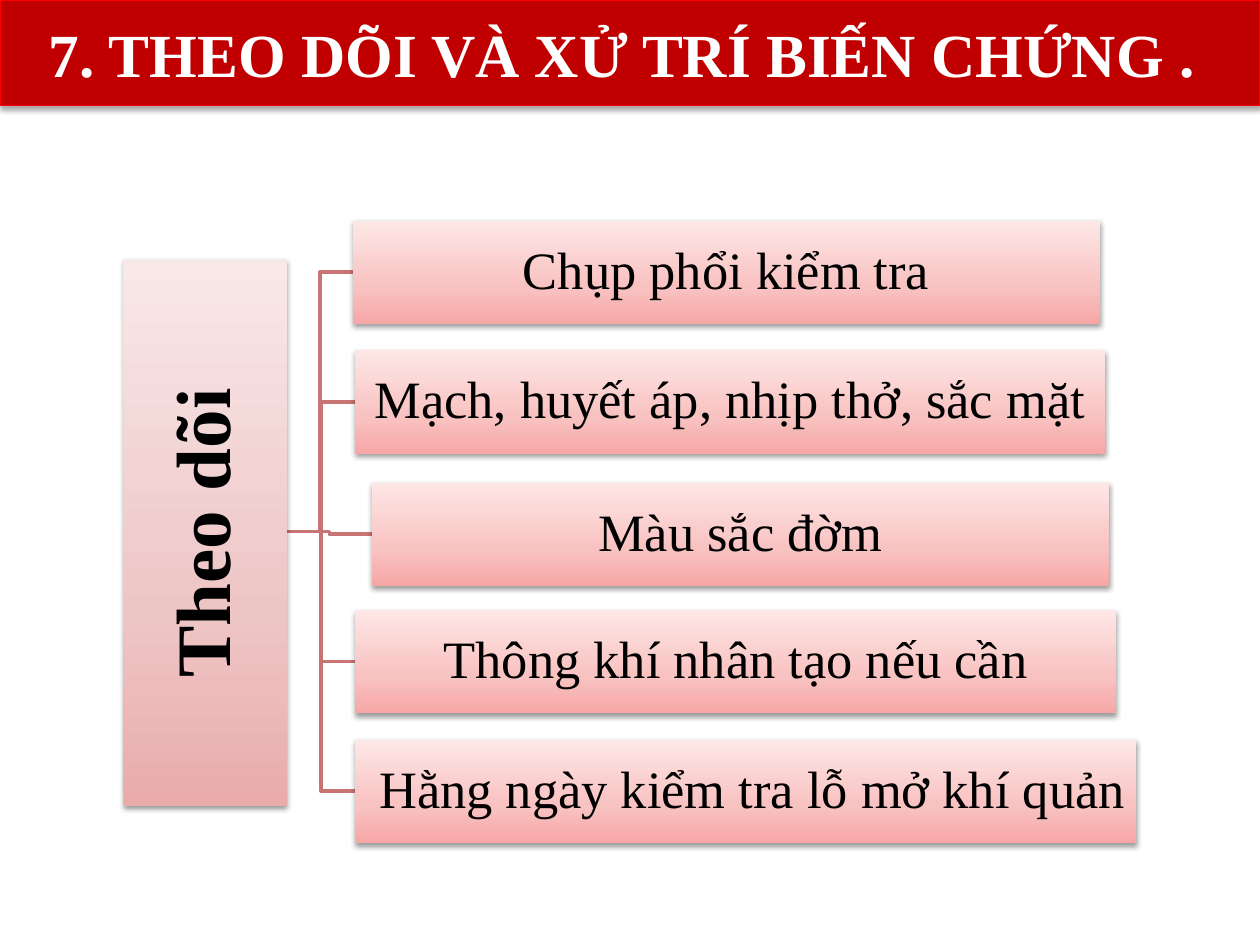
from pptx import Presentation
from pptx.dml.color import RGBColor
from pptx.enum import shapes, text
from pptx.oxml import ns, parse_xml
from pptx.util import Inches, Pt

FONT = "Times New Roman"
HUB_GRADIENT = [(0, "E9ACAB"), (35, "EEC5C5"), (100, "F9E8E8")]
ITEM_GRADIENT = [(0, "F6A7A6"), (35, "F8C2C1"), (100, "FDE7E6")]
LINK_COLOUR = "C77472"
HUB_RIGHT, HUB_MIDDLE = 2.28, 4.22
ITEM_HEIGHT = 0.82
ITEMS = [  # left, top, width, wording
    (2.80, 1.75, 5.93, "Chụp phổi kiểm tra"),
    (2.82, 2.78, 5.95, "Mạch, huyết áp, nhịp thở, sắc mặt"),
    (2.95, 3.83, 5.85, "Màu sắc đờm"),
    (2.82, 4.84, 6.04, "Thông khí nhân tạo nếu cần"),
    (2.82, 5.87, 6.20, " Hằng ngày kiểm tra lỗ mở khí quản"),
]


def colour(value):
    return RGBColor.from_string(value)


def add_shadow(shape, opacity, distance):
    """Give the shape a soft shadow that falls straight down."""
    shape.shadow.inherit = False
    effects = shape._element.spPr.find(ns.qn("a:effectLst"))
    effects.append(parse_xml(
        f'<a:outerShdw {ns.nsdecls("a")} blurRad="{Pt(3.1)}" dist="{Pt(distance)}" '
        f'dir="5400000" rotWithShape="0"><a:srgbClr val="000000">'
        f'<a:alpha val="{opacity * 1000}"/></a:srgbClr></a:outerShdw>'))


def fill_gradient(shape, stops):
    """Run the stops from the bottom up, whatever the shape's rotation."""
    shape.fill.gradient()
    default = shape._element.spPr.find(ns.qn("a:gradFill"))
    marks = "".join(f'<a:gs pos="{place * 1000}"><a:srgbClr val="{value}"/></a:gs>'
                    for place, value in stops)
    default.getparent().replace(default, parse_xml(
        f'<a:gradFill {ns.nsdecls("a")} rotWithShape="0"><a:gsLst>{marks}</a:gsLst>'
        f'<a:lin ang="16200000" scaled="0"/></a:gradFill>'))


def write(shape, wording, size, value="000000", bold=False, inset=None, spacing=None):
    frame = shape.text_frame
    frame.word_wrap = True
    frame.vertical_anchor = text.MSO_ANCHOR.MIDDLE
    if inset is not None:
        for side in ("left", "top", "right", "bottom"):
            setattr(frame, f"margin_{side}", Inches(inset))
    para = frame.paragraphs[0]
    para.alignment = text.PP_ALIGN.CENTER
    para.line_spacing = spacing
    span = para.add_run()
    span.text = wording
    for name, setting in {"name": FONT, "size": Pt(size), "bold": bold}.items():
        setattr(span.font, name, setting)
    span.font.color.rgb = colour(value)


def add_rectangle(page, *bounds):
    return page.shapes.add_shape(shapes.MSO_SHAPE.RECTANGLE, *map(Inches, bounds))


def add_title(page, wording):
    banner = add_rectangle(page, 0, 0, 10, 0.84)
    banner.fill.solid()
    banner.fill.fore_color.rgb = colour("C00000")
    banner.line.color.rgb = colour("FF0000")
    banner.line.width = Pt(0.75)
    add_shadow(banner, 35, 1.8)
    write(banner, wording, 35, "FFFFFF", bold=True)


def add_link(page, left, middle):
    """Draw the elbow from the hub to an item, bending halfway."""
    bend = (HUB_RIGHT + left) / 2
    corners = [(bend, HUB_MIDDLE), (bend, middle), (left, middle)]
    builder = page.shapes.build_freeform(Inches(HUB_RIGHT), Inches(HUB_MIDDLE))
    builder.add_line_segments([tuple(map(Inches, corner)) for corner in corners],
                              close=False)
    link = builder.convert_to_shape()
    link.fill.background()
    link.line.color.rgb = colour(LINK_COLOUR)
    link.line.width = Pt(2)
    link.shadow.inherit = False


def add_box(page, bounds, stops, wording, size, inset, bold=False, rotation=0):
    box = add_rectangle(page, *bounds)
    box.rotation = rotation
    fill_gradient(box, stops)
    box.line.fill.background()
    add_shadow(box, 38, 1.6)
    write(box, wording, size, bold=bold, inset=inset, spacing=0.9)


def main():
    deck = Presentation()
    deck.slide_width, deck.slide_height = Inches(10), Inches(7.5)
    page = deck.slides.add_slide(deck.slide_layouts[6])
    add_title(page, "7. THEO DÕI VÀ XỬ TRÍ BIẾN CHỨNG . ")
    for left, top, _, _ in reversed(ITEMS):
        add_link(page, left, top + ITEM_HEIGHT / 2)
    add_box(page, (-0.54, 3.58, 4.34, 1.3), HUB_GRADIENT, "Theo dõi", 44, 0.03,
            bold=True, rotation=270)
    for left, top, width, wording in ITEMS:
        add_box(page, (left, top, width, ITEM_HEIGHT), ITEM_GRADIENT, wording, 30, 0.02)
    deck.save("out.pptx")


if __name__ == "__main__":
    main()
